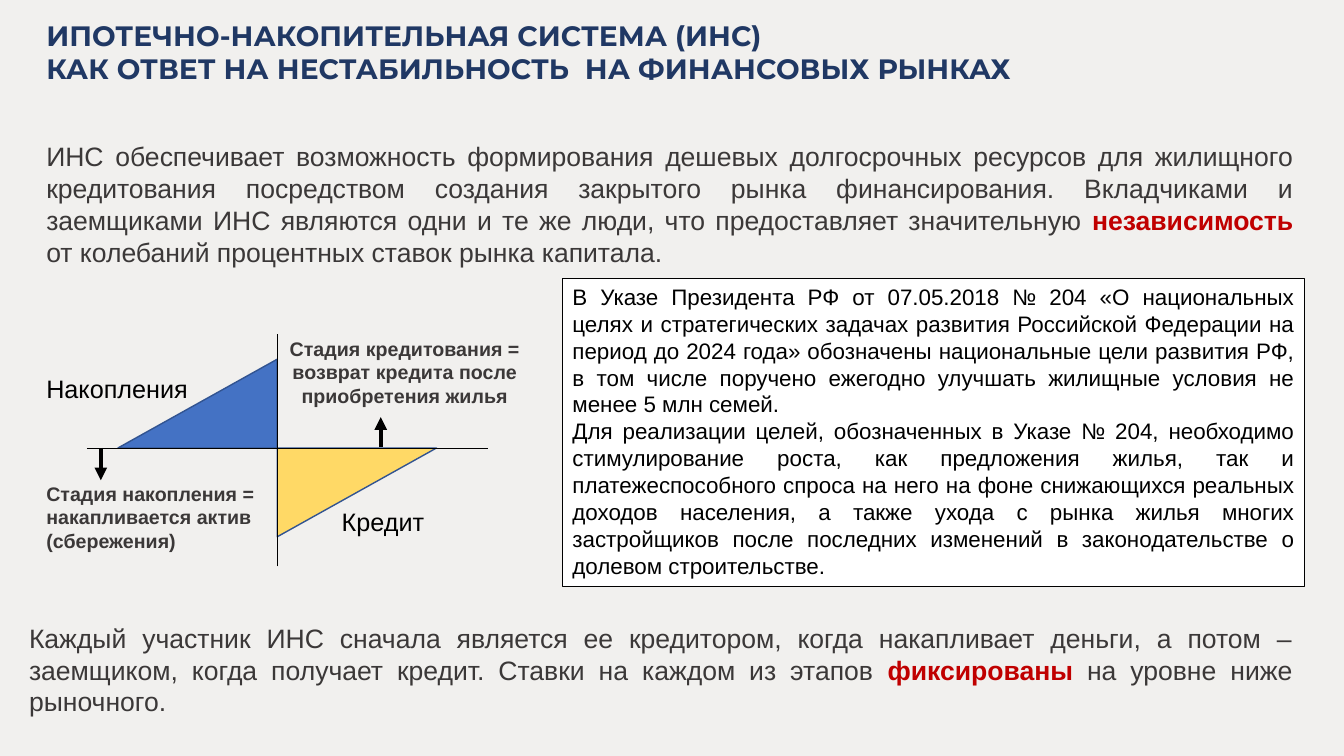
from dataclasses import dataclass
from typing import Any, NamedTuple

from lxml import etree
from pptx import Presentation
from pptx.dml.color import RGBColor
from pptx.enum.shapes import MSO_CONNECTOR, MSO_SHAPE
from pptx.enum.text import MSO_ANCHOR, MSO_AUTO_SIZE, PP_ALIGN
from pptx.oxml.ns import qn
from pptx.util import Pt

LEFT, CENTER, JUSTIFY = PP_ALIGN.LEFT, PP_ALIGN.CENTER, PP_ALIGN.JUSTIFY
TOP, MIDDLE = MSO_ANCHOR.TOP, MSO_ANCHOR.MIDDLE
GROW = MSO_AUTO_SIZE.SHAPE_TO_FIT_TEXT
RECTANGLE, TRIANGLE = MSO_SHAPE.RECTANGLE, MSO_SHAPE.RIGHT_TRIANGLE
STRAIGHT = MSO_CONNECTOR.STRAIGHT


@dataclass(frozen=True)
class Theme:
    """Colours, fonts and type sizes of the slide."""
    background: str = "F1F0EE"
    navy: str = "203864"
    grey: str = "3B3838"
    red: str = "C00000"
    black: str = "000000"
    white: str = "FFFFFF"
    blue: str = "4472C4"
    yellow: str = "FFD966"
    outline: str = "325491"
    heading: str = "Montserrat"
    body: str = "Arial"
    title: float = 20
    lead: float = 19
    label: float = 18
    decree: float = 16
    stage: float = 14


THEME = Theme()


class Box(NamedTuple):
    """Left, top, width and height in points."""
    left: float
    top: float
    width: float
    height: float


class Span(NamedTuple):
    """A stretch of text, emphasised or plain."""
    text: str
    strong: bool = False


@dataclass(frozen=True)
class Text:
    """Paragraphs with one shared format."""
    box: Box
    paragraphs: list[list[Span]]
    size: float
    color: str = THEME.grey
    font: str = THEME.body
    bold: bool = False
    align: Any = LEFT
    anchor: Any = TOP
    wrap: bool = True


class Wedge(NamedTuple):
    """A right triangle touching the centre of the axes."""
    left: float
    top: float
    color: str
    rotation: float


class Line(NamedTuple):
    """A straight line or arrow."""
    x1: float
    y1: float
    x2: float
    y2: float
    width: float
    arrow: bool = False


AXIS_X, AXIS_Y = 198, 320
WEDGE_W, WEDGE_H = 113.75, 63.4
THIN, THICK = 0.5, 3

WEDGES = [
    Wedge(AXIS_X, AXIS_Y, THEME.yellow, 180),
    Wedge(AXIS_X - WEDGE_W, AXIS_Y - WEDGE_H, THEME.blue, 0),
]

LINES = [
    Line(62, AXIS_Y, 348.5, AXIS_Y, THIN),
    Line(AXIS_X, 404.6, AXIS_X, 238.3, THIN),
    Line(72, AXIS_Y, 72, 343, THICK, True),
    Line(272, AXIS_Y - 1, 272, 298, THICK, True),
]

TEXTS = [
    Text(Box(26, 9.4, 720, 80), [
        [Span("ИПОТЕЧНО-НАКОПИТЕЛЬНАЯ СИСТЕМА (ИНС)")],
        [Span("КАК ОТВЕТ НА НЕСТАБИЛЬНОСТЬ  НА ФИНАНСОВЫХ РЫНКАХ")],
    ], THEME.title, THEME.navy, THEME.heading, True),
    Text(Box(26, 95.8, 905, 99.4), [[
        Span("ИНС обеспечивает возможность формирования дешевых долгосрочных ресурсов для "
             "жилищного кредитования посредством создания закрытого рынка финансирования. "
             "Вкладчиками и заемщиками ИНС являются одни и те же люди, что предоставляет "
             "значительную "),
        Span("независимость", True),
        Span(" от колебаний процентных ставок рынка капитала."),
    ]], THEME.lead, align=JUSTIFY, anchor=MIDDLE),
    Text(Box(26, 262.8, 116.6, 29), [[Span("Накопления")]],
         THEME.label, THEME.black, wrap=False),
    Text(Box(237, 357.8, 74, 29), [[Span("Кредит")]],
         THEME.label, THEME.black, wrap=False),
    Text(Box(26, 340.6, 193.7, 58.3), [
        [Span("Стадия накопления = накапливается актив")],
        [Span("(сбережения)")],
    ], THEME.stage, bold=True),
    Text(Box(176.4, 236.9, 225.4, 58.3), [
        [Span("Стадия кредитования = возврат кредита после")],
        [Span("приобретения жилья")],
    ], THEME.stage, bold=True, align=CENTER),
    Text(Box(13.7, 440, 916.6, 76.3), [[
        Span("Каждый участник ИНС сначала является ее кредитором, когда накапливает деньги, "
             "а потом – заемщиком, когда получает кредит. Ставки на каждом из этапов "),
        Span("фиксированы", True),
        Span(" на уровне ниже рыночного."),
    ]], THEME.lead, align=JUSTIFY, anchor=MIDDLE),
]

DECREE = Text(Box(401.8, 198.7, 530, 220.3), [
    [Span("В Указе Президента РФ от 07.05.2018 № 204 «О национальных целях и стратегических "
          "задачах развития Российской Федерации на период до 2024 года» обозначены "
          "национальные цели развития РФ, в том числе поручено ежегодно улучшать жилищные "
          "условия не менее 5 млн семей.")],
    [Span("Для реализации целей, обозначенных в Указе № 204, необходимо стимулирование роста, "
          "как предложения жилья, так и платежеспособного спроса на него на фоне снижающихся "
          "реальных доходов населения, а также ухода с рынка жилья многих застройщиков после "
          "последних изменений в законодательстве о долевом строительстве.")],
], THEME.decree, THEME.black, align=JUSTIFY)


def rgb(color: str) -> RGBColor:
    """Turn a hex string into a colour."""
    return RGBColor.from_string(color)


def write(sp: Any, text: Text) -> None:
    """Fill a shape with formatted paragraphs."""
    tf = sp.text_frame
    frame = {"word_wrap": text.wrap, "auto_size": GROW, "vertical_anchor": text.anchor}
    for name, value in frame.items():
        setattr(tf, name, value)
    for i, spans in enumerate(text.paragraphs):
        p = tf.paragraphs[0] if i == 0 else tf.add_paragraph()
        p.alignment = text.align
        for span in spans:
            r = p.add_run()
            r.text = span.text
            font = {"name": text.font, "size": Pt(text.size), "bold": text.bold or span.strong}
            for name, value in font.items():
                setattr(r.font, name, value)
            r.font.color.rgb = rgb(THEME.red if span.strong else text.color)


def add_text(shapes: Any, text: Text) -> None:
    """Add a text box."""
    write(shapes.add_textbox(*map(Pt, text.box)), text)


def add_filled(shapes: Any, kind: Any, box: Box, fill: str, line: str, width: float) -> Any:
    """Add a filled, outlined shape without a shadow."""
    sp = shapes.add_shape(kind, *map(Pt, box))
    sp.shadow.inherit = False
    sp.fill.solid()
    sp.fill.fore_color.rgb = rgb(fill)
    sp.line.color.rgb = rgb(line)
    sp.line.width = Pt(width)
    return sp


def add_wedge(shapes: Any, wedge: Wedge) -> None:
    """Add a mirrored right triangle."""
    box = Box(wedge.left, wedge.top, WEDGE_W, WEDGE_H)
    sp = add_filled(shapes, TRIANGLE, box, wedge.color, THEME.outline, 1)
    sp.rotation = wedge.rotation
    sp._element.spPr.find(qn("a:xfrm")).set("flipH", "1")


def add_line(shapes: Any, line: Line) -> None:
    """Add a black line, with an arrowhead if asked."""
    sp = shapes.add_connector(STRAIGHT, *map(Pt, line[:4]))
    sp.line.color.rgb = rgb(THEME.black)
    sp.line.width = Pt(line.width)
    if line.arrow:
        etree.SubElement(sp.line._get_or_add_ln(), qn("a:tailEnd")).set("type", "triangle")
    etree.SubElement(sp._element.spPr, qn("a:effectLst"))


def main() -> None:
    """Build and save the slide."""
    prs = Presentation()
    prs.slide_width, prs.slide_height = Pt(960), Pt(540)
    s = prs.slides.add_slide(prs.slide_layouts[6])
    s.background.fill.solid()
    s.background.fill.fore_color.rgb = rgb(THEME.background)
    for wedge in WEDGES:
        add_wedge(s.shapes, wedge)
    for line in LINES:
        add_line(s.shapes, line)
    for text in TEXTS:
        add_text(s.shapes, text)
    write(add_filled(s.shapes, RECTANGLE, DECREE.box, THEME.white, THEME.black, 0.75), DECREE)
    prs.save("out.pptx")


if __name__ == "__main__":
    main()
